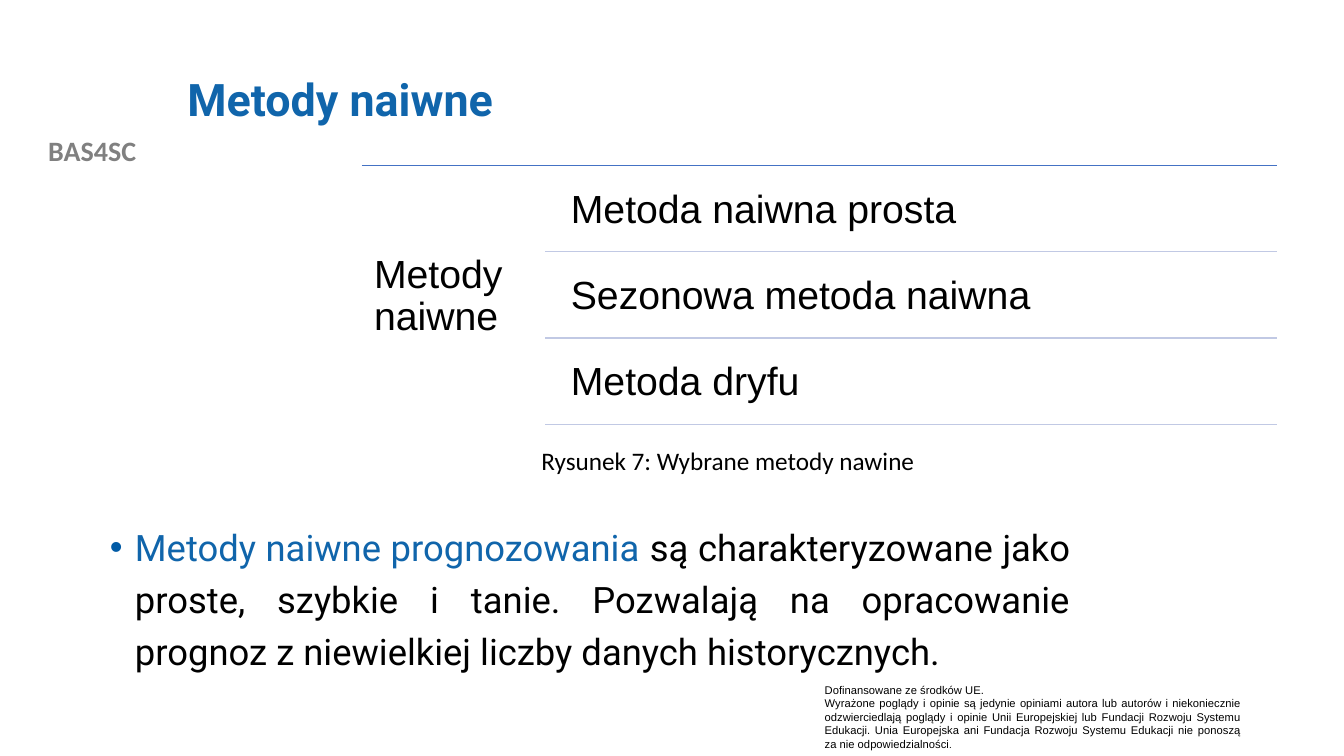
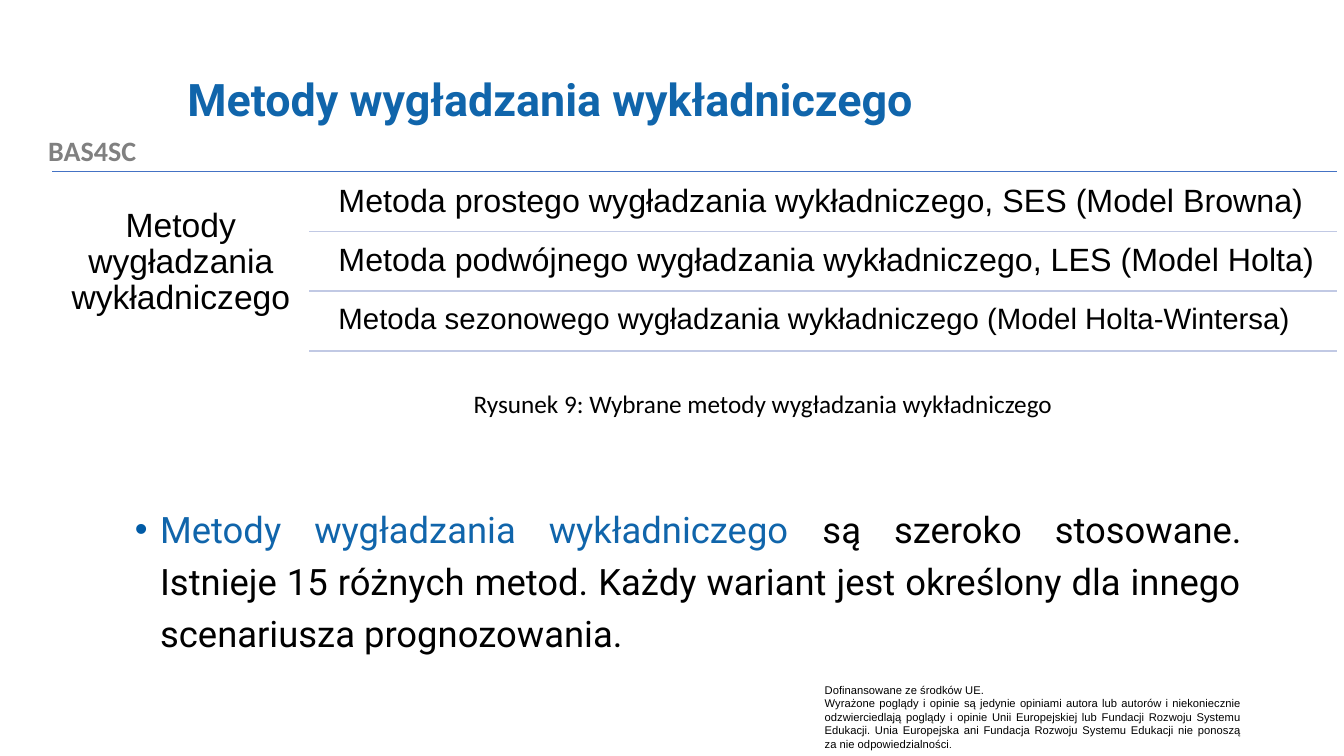
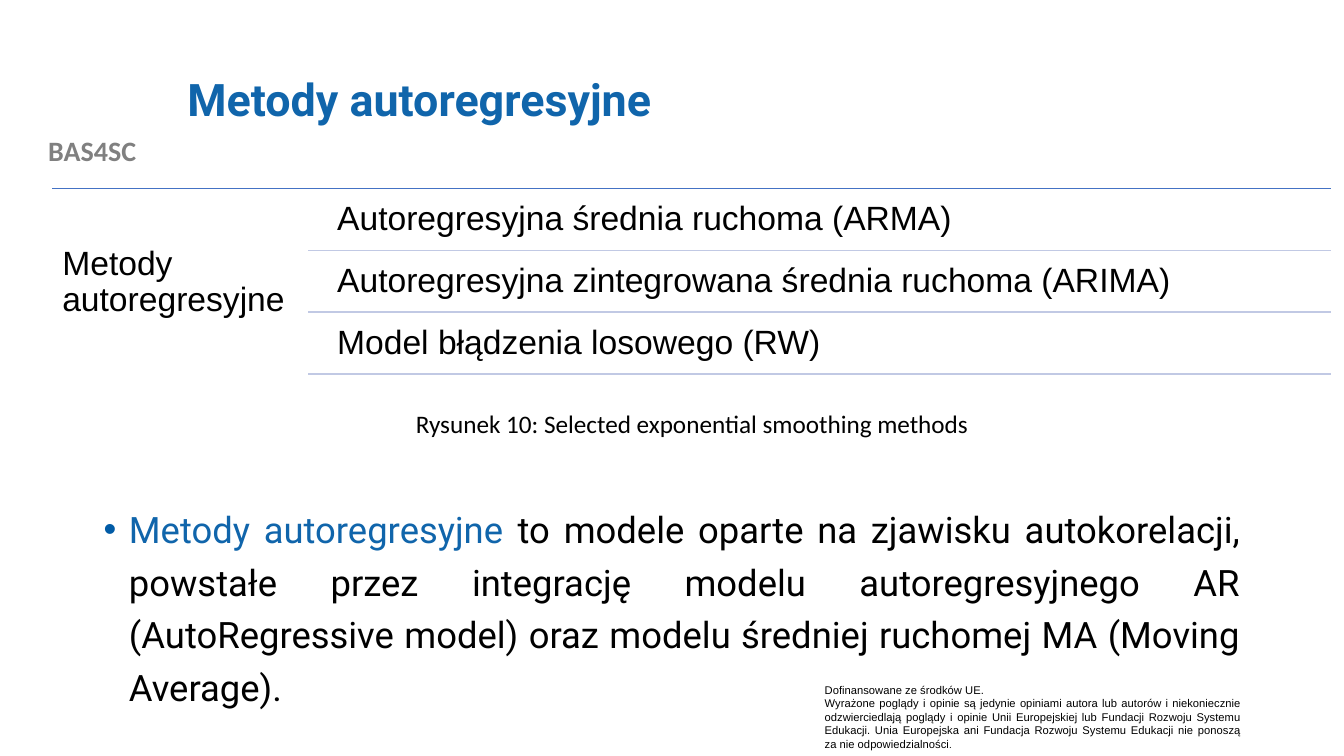
from dataclasses import dataclass

from lxml.etree import SubElement
from pptx import Presentation
from pptx.dml.color import RGBColor
from pptx.enum.shapes import MSO_CONNECTOR as Connector
from pptx.enum.text import MSO_ANCHOR as Anchor
from pptx.enum.text import MSO_AUTO_SIZE as AutoSize
from pptx.enum.text import PP_ALIGN as Align
from pptx.oxml.ns import qn
from pptx.util import Inches, Pt

WIDTH, HEIGHT = Inches(13.33), Inches(7.5)
TITLE_ONLY = 5
LABEL_SHARE = 0.2
INDENT_SHARE = 0.015
ROW_UNITS = 20

BLUE = RGBColor(0x10, 0x65, 0xAB)
BULLET_BLUE = RGBColor(0x01, 0x5B, 0xA6)
TOP_RULE = RGBColor(0x44, 0x72, 0xC4)
ROW_RULE = RGBColor(0xC1, 0xC9, 0xE4)
GREY = RGBColor(0x80, 0x80, 0x80)
BLACK = RGBColor(0, 0, 0)

PROJECT = "BAS4SC"
FUNDING = "Dofinansowane ze środków UE."
DISCLAIMER = (
    "Wyrażone poglądy i opinie są jedynie opiniami autora lub autorów i niekoniecznie "
    "odzwierciedlają poglądy i opinie Unii Europejskiej lub Fundacji Rozwoju Systemu Edukacji. "
    "Unia Europejska ani Fundacja Rozwoju Systemu Edukacji nie ponoszą za nie odpowiedzialności"
)


@dataclass(frozen=True)
class Area:
    """Left, top, width and height in percent of the slide."""

    left: float
    top: float
    width: float
    height: float

    def lengths(self) -> tuple[int, int, int, int]:
        return (
            int(WIDTH * self.left / 100),
            int(HEIGHT * self.top / 100),
            int(WIDTH * self.width / 100),
            int(HEIGHT * self.height / 100),
        )


@dataclass(frozen=True)
class Method:
    name: str
    size: float


@dataclass(frozen=True)
class Tree:
    area: Area
    label: str
    label_size: float
    methods: tuple[Method, ...]
    inset: float = 0.1
    label_align: Align = Align.LEFT
    row_anchor: Anchor = Anchor.TOP


@dataclass(frozen=True)
class Topic:
    title: str
    tree: Tree
    caption: str
    caption_area: Area
    lead: str
    body: str
    body_area: Area
    caption_align: Align = Align.LEFT


PROJECT_AREA = Area(0, 17.07, 13.73, 5.87)
FOOTER_AREA = Area(60.62, 89.73, 32.48, 10.27)
TITLE_AREA = Area(13.2, 5.33, 79.97, 16.27)

TOPICS = (
    Topic(
        title="Metody naiwne",
        tree=Tree(
            Area(26.93, 21.87, 68.12, 34.8),
            "Metody naiwne",
            28,
            (
                Method("Metoda naiwna prosta", 28),
                Method("Sezonowa metoda naiwna", 28),
                Method("Metoda dryfu", 28),
            ),
            inset=0.12,
            row_anchor=Anchor.MIDDLE,
        ),
        caption="Rysunek 7: Wybrane metody nawine",
        caption_area=Area(39.54, 58.27, 31.13, 5.33),
        lead="Metody naiwne prognozowania ",
        body="są charakteryzowane jako proste, szybkie i tanie. Pozwalają na opracowanie "
        "prognoz z niewielkiej liczby danych historycznych.",
        body_area=Area(7.43, 67.6, 73, 20.93),
    ),
    Topic(
        title="Metody wygładzania wykładniczego",
        tree=Tree(
            Area(3.9, 22.67, 95.57, 24.13),
            "Metody wygładzania wykładniczego",
            24,
            (
                Method("Metoda prostego wygładzania wykładniczego, SES (Model Browna)", 23),
                Method("Metoda podwójnego wygładzania wykładniczego, LES (Model Holta)", 23),
                Method("Metoda sezonowego wygładzania wykładniczego (Model Holta-Wintersa)", 21),
            ),
            label_align=Align.CENTER,
        ),
        caption="Rysunek 9: Wybrane metody wygładzania wykładniczego",
        caption_area=Area(34.51, 50.67, 47.64, 5.33),
        lead="Metody wygładzania wykładniczego ",
        body="są szeroko stosowane. Istnieje 15 różnych metod. Każdy wariant jest określony "
        "dla innego scenariusza prognozowania.",
        body_area=Area(9.3, 65.2, 83.87, 24.13),
    ),
    Topic(
        title="Metody autoregresyjne",
        tree=Tree(
            Area(3.9, 24.93, 95.12, 24.93),
            "Metody autoregresyjne",
            24,
            (
                Method("Autoregresyjna średnia ruchoma (ARMA)", 24),
                Method("Autoregresyjna zintegrowana średnia ruchoma (ARIMA)", 24),
                Method("Model błądzenia losowego (RW)", 24),
            ),
        ),
        caption="Rysunek 10: Selected exponential smoothing methods",
        caption_area=Area(27.68, 53.33, 47.64, 5.33),
        lead="Metody autoregresyjne ",
        body="to modele oparte na zjawisku autokorelacji, powstałe przez integrację modelu "
        "autoregresyjnego AR (AutoRegressive model) oraz modelu średniej ruchomej MA "
        "(Moving Average).",
        body_area=Area(6.98, 65.33, 86.12, 29.33),
        caption_align=Align.CENTER,
    ),
)


def write(para, text: str, *, font: str, size: float, color: RGBColor = BLACK,
          bold: bool = False, align: Align = Align.LEFT, spacing: float = 1.0) -> None:
    para.alignment = align
    para.line_spacing = spacing
    span = para.add_run()
    span.text = text
    span.font.name = font
    span.font.size = Pt(size)
    span.font.bold = bold
    span.font.color.rgb = color


def add_box(shapes, lengths: tuple[int, int, int, int], *, anchor: Anchor = Anchor.TOP,
            inset: float | None = None):
    box = shapes.add_textbox(*lengths)
    frame = box.text_frame
    frame.word_wrap = True
    frame.vertical_anchor = anchor
    if inset is not None:
        frame.margin_left = frame.margin_right = Inches(inset)
        frame.margin_top = frame.margin_bottom = Inches(inset)
    return box


def add_rule(shapes, left: int, right: int, top: int, color: RGBColor) -> None:
    rule = shapes.add_connector(Connector.STRAIGHT, left, top, right, top)
    rule.line.color.rgb = color
    rule.line.width = Pt(1)
    SubElement(rule.element.spPr, qn("a:effectLst"))


def add_bullet(para) -> None:
    properties = para._p.get_or_add_pPr()
    properties.set("marL", str(Inches(0.25)))
    properties.set("indent", str(-Inches(0.25)))
    color = SubElement(properties, qn("a:buClr"))
    SubElement(color, qn("a:srgbClr"), val=str(BULLET_BLUE))
    SubElement(properties, qn("a:buFont"), typeface="Arial")
    SubElement(properties, qn("a:buChar"), char="•")


def add_shared_text(page, layout) -> None:
    project = add_box(page.shapes, PROJECT_AREA.lengths())
    write(project.text_frame.paragraphs[0], PROJECT, font="Calibri", size=20,
          color=GREY, bold=True, align=Align.CENTER)
    footer = add_box(page.shapes, FOOTER_AREA.lengths())
    frame = footer.text_frame
    write(frame.paragraphs[0], FUNDING, font="Arial", size=8, align=Align.JUSTIFY)
    para = frame.add_paragraph()
    for text, size in ((DISCLAIMER, 8), (".", 7)):
        write(para, text, font="Arial", size=size, align=Align.JUSTIFY)
    for number, box in enumerate((project, footer), start=20):
        box.element.nvSpPr.cNvPr.set("id", str(number))
        layout.shapes.element.append(box.element)


def add_title(page, text: str) -> None:
    title = page.shapes.title
    title.left, title.top, title.width, title.height = TITLE_AREA.lengths()
    frame = title.text_frame
    frame.auto_size = AutoSize.NONE
    frame.vertical_anchor = Anchor.MIDDLE
    write(frame.paragraphs[0], text, font="Roboto", size=32, color=BLUE, bold=True, spacing=0.9)


def add_tree(page, tree: Tree) -> None:
    shapes = page.shapes.add_group_shape().shapes
    left, top, width, height = tree.area.lengths()
    right = left + width
    label_width = int(width * LABEL_SHARE)
    branch_left = left + label_width
    text_left = branch_left + int(width * INDENT_SHARE)
    count = len(tree.methods)
    gap = height // (count * ROW_UNITS + count + 1)
    row_height = gap * ROW_UNITS

    add_rule(shapes, left, right, top, TOP_RULE)
    label = add_box(shapes, (left, top, label_width, height), anchor=Anchor.MIDDLE,
                    inset=tree.inset)
    write(label.text_frame.paragraphs[0], tree.label, font="Arial", size=tree.label_size,
          align=tree.label_align, spacing=0.9)
    for index, method in enumerate(tree.methods):
        row_top = top + gap + index * (row_height + gap)
        row = add_box(shapes, (text_left, row_top, right - text_left, row_height),
                      anchor=tree.row_anchor, inset=tree.inset)
        write(row.text_frame.paragraphs[0], method.name, font="Arial", size=method.size,
              spacing=0.9)
        add_rule(shapes, branch_left, right, row_top + row_height, ROW_RULE)


def add_topic(page, topic: Topic) -> None:
    add_title(page, topic.title)
    body = add_box(page.shapes, topic.body_area.lengths())
    para = body.text_frame.paragraphs[0]
    add_bullet(para)
    for text, color in ((topic.lead, BLUE), (topic.body, BLACK)):
        write(para, text, font="Roboto", size=26, color=color, align=Align.JUSTIFY, spacing=1.2)
    add_tree(page, topic.tree)
    caption = add_box(page.shapes, topic.caption_area.lengths())
    write(caption.text_frame.paragraphs[0], topic.caption, font="Calibri", size=18,
          align=topic.caption_align)


def main() -> None:
    deck = Presentation()
    deck.slide_width, deck.slide_height = WIDTH, HEIGHT
    layout = deck.slide_layouts[TITLE_ONLY]
    pages = [deck.slides.add_slide(layout) for _ in TOPICS]
    add_shared_text(pages[0], layout)
    for page, topic in zip(pages, TOPICS):
        add_topic(page, topic)
    deck.save("out.pptx")


if __name__ == "__main__":
    main()
